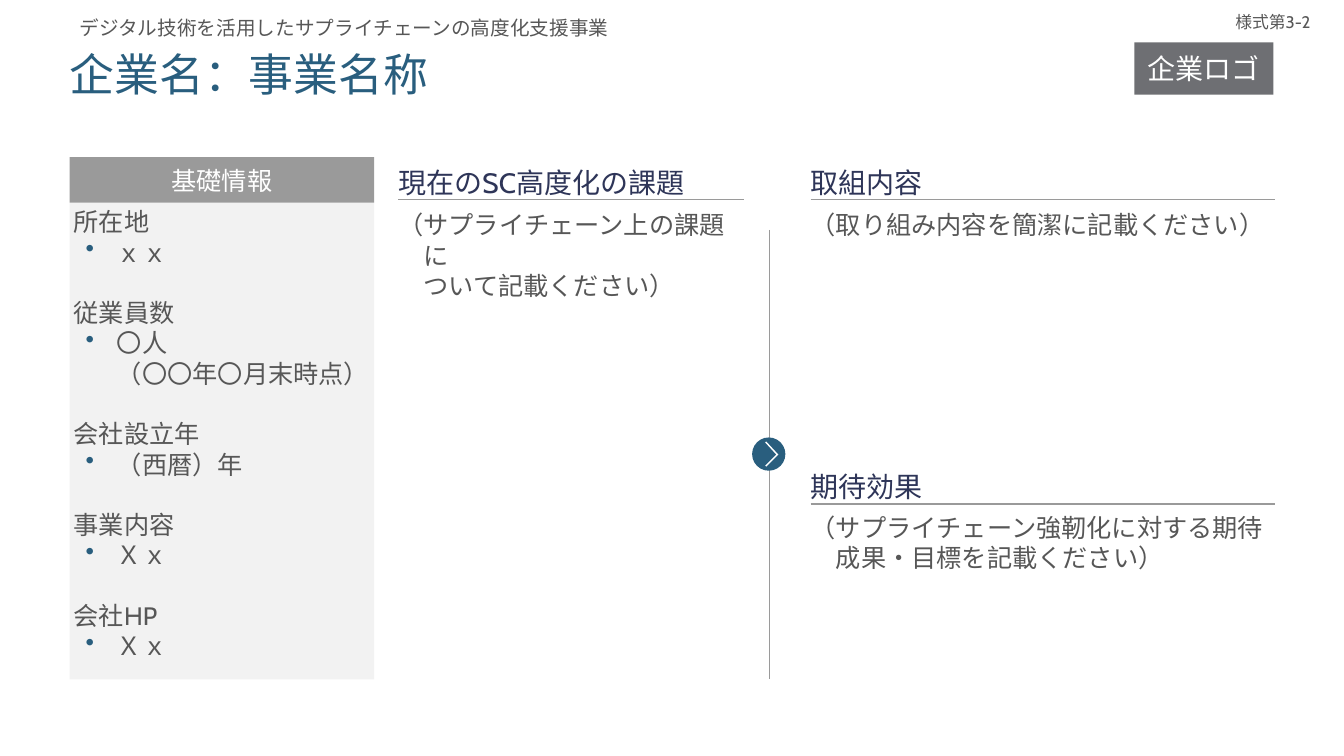
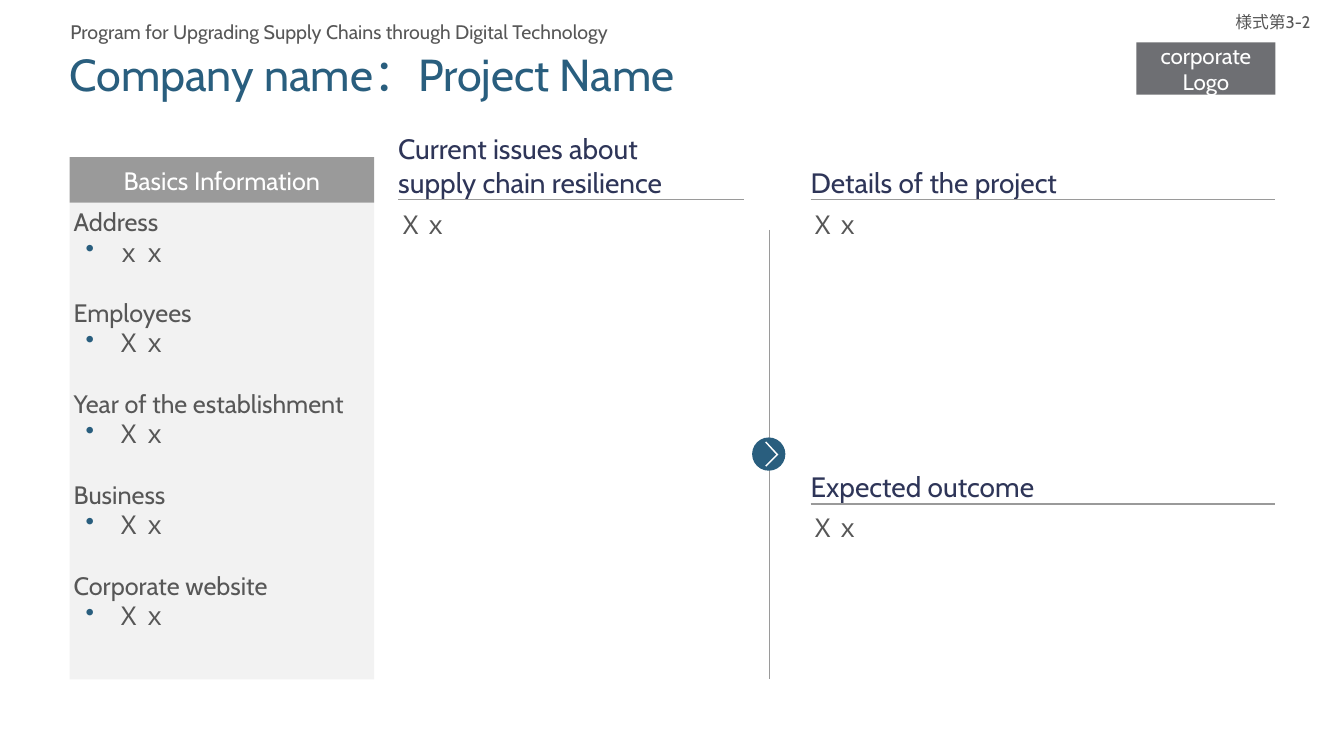
from lxml import etree
from pptx import Presentation
from pptx.dml.color import RGBColor
from pptx.enum.shapes import MSO_CONNECTOR, MSO_SHAPE
from pptx.enum.text import MSO_ANCHOR, MSO_AUTO_SIZE, PP_ALIGN
from pptx.oxml.ns import qn
from pptx.util import Inches, Pt

RECT, OVAL = MSO_SHAPE.RECTANGLE, MSO_SHAPE.OVAL
STRAIGHT = MSO_CONNECTOR.STRAIGHT
TOP, MIDDLE, BOTTOM = MSO_ANCHOR.TOP, MSO_ANCHOR.MIDDLE, MSO_ANCHOR.BOTTOM
LEFT, CENTER = PP_ALIGN.LEFT, PP_ALIGN.CENTER
GROW = MSO_AUTO_SIZE.SHAPE_TO_FIT_TEXT

FONT = "Cabin"
BLUE, NAVY, TEXT, WHITE = "295E7E", "2E3558", "575757", "FFFFFF"
GREY, DARK, PALE = "9A9A9A", "6E6F73", "F2F2F2"
NO_INSET = (0, 0, 0, 0)
BODY_INSET = (0, 0.08, 0, 0)
HEAD_INSET = (0, 0.05, 0, 0.05)
FORM = "様式第3-2"

# left, rule height, width, body top, body height
ISSUES = (3.95, 1.98, 3.43, 2, 1.8)
DETAILS = (8.04, 1.98, 4.61, 2, 1.8)
OUTCOME = (8.04, 5, 4.61, 5, 1.74)

SLIDES = [
    {
        "title": "企業名：事業名称",
        "program": ("デジタル技術を活用したサプライチェーンの高度化支援事業", 0.69, 0.1),
        "logo": ("企業ロゴ", 11.25, 20),
        "panel": "基礎情報",
        "facts": [
            ("所在地", "ｘｘ"),
            ("従業員数", "〇人\v（〇〇年〇月末時点）"),
            ("会社設立年", "（西暦）年"),
            ("事業内容", "Ｘｘ"),
            ("会社HP", "Ｘｘ"),
        ],
        "parts": [
            (ISSUES, ["現在のSC高度化の課題"],
             "（サプライチェーン上の課題に\vついて記載ください）"),
            (DETAILS, ["取組内容"], "（取り組み内容を簡潔に記載ください）"),
            (OUTCOME, ["期待効果"],
             "（サプライチェーン強靭化に対する期待成果・目標を記載ください）"),
        ],
    },
    {
        "title": "Company name：Project Name",
        "program": ("Program for Upgrading Supply Chains through Digital Technology",
                    0.6, 0.14),
        "logo": ("corporate Logo", 11.27, 16),
        "panel": "Basics Information",
        "facts": [
            ("Address", "ｘｘ"),
            ("Employees", "Ｘｘ"),
            ("Year of the establishment", "Ｘｘ"),
            ("Business", "Ｘｘ"),
            ("Corporate website", "Ｘｘ"),
        ],
        "parts": [
            (ISSUES, ["Current issues about", "supply chain resilience"], "Ｘｘ"),
            (DETAILS, ["Details of the project"], "Ｘｘ"),
            (OUTCOME, ["Expected outcome"], "Ｘｘ"),
        ],
    },
]


def rgb(code):
    return RGBColor.from_string(code)


def write(shape, text, size=18, color=TEXT, align=LEFT, indent=0, hang=0,
          bullet=None, before=0, spacing=None):
    """Add one paragraph to a shape, filling its empty first one if it can."""
    frame = shape.text_frame
    para = frame.add_paragraph() if frame.text else frame.paragraphs[0]
    para.text = text
    props = para._p.get_or_add_pPr()
    props.set("marL", str(Inches(indent)))
    props.set("indent", str(Inches(-hang)))
    if bullet:
        tint = etree.SubElement(props, qn("a:buClr"))
        etree.SubElement(tint, qn("a:srgbClr")).set("val", bullet)
        etree.SubElement(props, qn("a:buChar")).set("char", "•")
        para.level = 1
    para.alignment = align
    if before:
        para.space_before = Pt(before)
    if spacing:
        para.line_spacing = spacing
    for run in para.runs:
        run.font.name = FONT
        run.font.size = Pt(size)
        run.font.color.rgb = rgb(color)


def frame_up(shape, inset, anchor):
    frame = shape.text_frame
    frame.word_wrap = True
    frame.vertical_anchor = anchor
    (frame.margin_left, frame.margin_top,
     frame.margin_right, frame.margin_bottom) = map(Inches, inset)


def paint(shape, fill):
    shape.shadow.inherit = False
    shape.fill.solid()
    shape.fill.fore_color.rgb = rgb(fill)
    shape.line.fill.background()


def add_box(slide, box, fill=None, kind=RECT, inset=(0.1, 0.05, 0.1, 0.05),
            anchor=MIDDLE):
    """Add a filled shape, or a text box when there is no fill."""
    place = [Inches(n) for n in box]
    if fill:
        shape = slide.shapes.add_shape(kind, *place)
        paint(shape, fill)
    else:
        shape = slide.shapes.add_textbox(*place)
    frame_up(shape, inset, anchor)
    return shape


def add_line(slide, *ends):
    line = slide.shapes.add_connector(STRAIGHT, *map(Inches, ends))
    line.line.color.rgb = rgb(GREY)
    line.line.width = Pt(0.75)
    etree.SubElement(line._element.spPr, qn("a:effectLst"))


def add_title(slide, text):
    title = slide.shapes.title
    title.left, title.top, title.width, title.height = map(
        Inches, (0.69, 0.52, 11.96, 0.48))
    frame_up(title, NO_INSET, TOP)
    title.text_frame.auto_size = GROW
    write(title, text, size=32, color=BLUE, spacing=0.9)


def add_panel(slide, head, facts):
    panel = add_box(slide, (0.69, 2.01, 3.02, 4.73), PALE,
                    inset=(0.04, 0.04, 0.04, 0.04), anchor=TOP)
    for num, (label, value) in enumerate(facts):
        write(panel, label, before=21.7 if num else 0)
        write(panel, value, indent=0.43, hang=0.31, bullet=BLUE)
    band = add_box(slide, (0.69, 1.56, 3.02, 0.45), GREY, inset=NO_INSET)
    write(band, head, color=WHITE, align=CENTER, indent=0.25, hang=0.25)


def add_divider(slide):
    """Draw the upright rule with its round arrow mark."""
    add_line(slide, 7.63, 2.28, 7.63, 6.74)
    add_box(slide, (7.46, 4.34, 0.33, 0.33), BLUE, OVAL)
    tip = [(7.6, 4.63), (7.59, 4.62), (7.7, 4.51), (7.59, 4.39),
           (7.6, 4.38), (7.72, 4.51)]
    points = [(Inches(x), Inches(y)) for x, y in tip]
    pen = slide.shapes.build_freeform(*points[0])
    pen.add_line_segments(points[1:], close=True)
    paint(pen.convert_to_shape(), WHITE)


def add_part(slide, place, heads, body):
    left, rule, width, top, height = place
    head = add_box(slide, (left, rule - 0.39, width, 0.43),
                   inset=HEAD_INSET, anchor=BOTTOM)
    for text in heads:
        write(head, text, size=20, color=NAVY)
    add_line(slide, left, rule, left + width, rule)
    note = add_box(slide, (left, top, width, height),
                   inset=BODY_INSET, anchor=TOP)
    write(note, body, indent=0.25, hang=0.25)


def add_slide(deck, data):
    slide = deck.slides.add_slide(deck.slide_layouts[5])
    add_title(slide, data["title"])
    add_panel(slide, data["panel"], data["facts"])
    add_divider(slide)
    for part in data["parts"]:
        add_part(slide, *part)
    text, left, size = data["logo"]
    logo = add_box(slide, (left, 0.42, 1.38, 0.52), DARK)
    write(logo, text, size=size, color=WHITE, align=CENTER)
    text, left, top = data["program"]
    write(add_box(slide, (left, top, 7.8, 0.34)), text, size=14)
    form = add_box(slide, (12.08, 0.05, 1.09, 0.33))
    write(form, FORM, size=12, align=CENTER)


def main():
    deck = Presentation()
    deck.slide_width, deck.slide_height = Inches(13.33), Inches(7.5)
    for data in SLIDES:
        add_slide(deck, data)
    deck.save("out.pptx")


if __name__ == "__main__":
    main()
